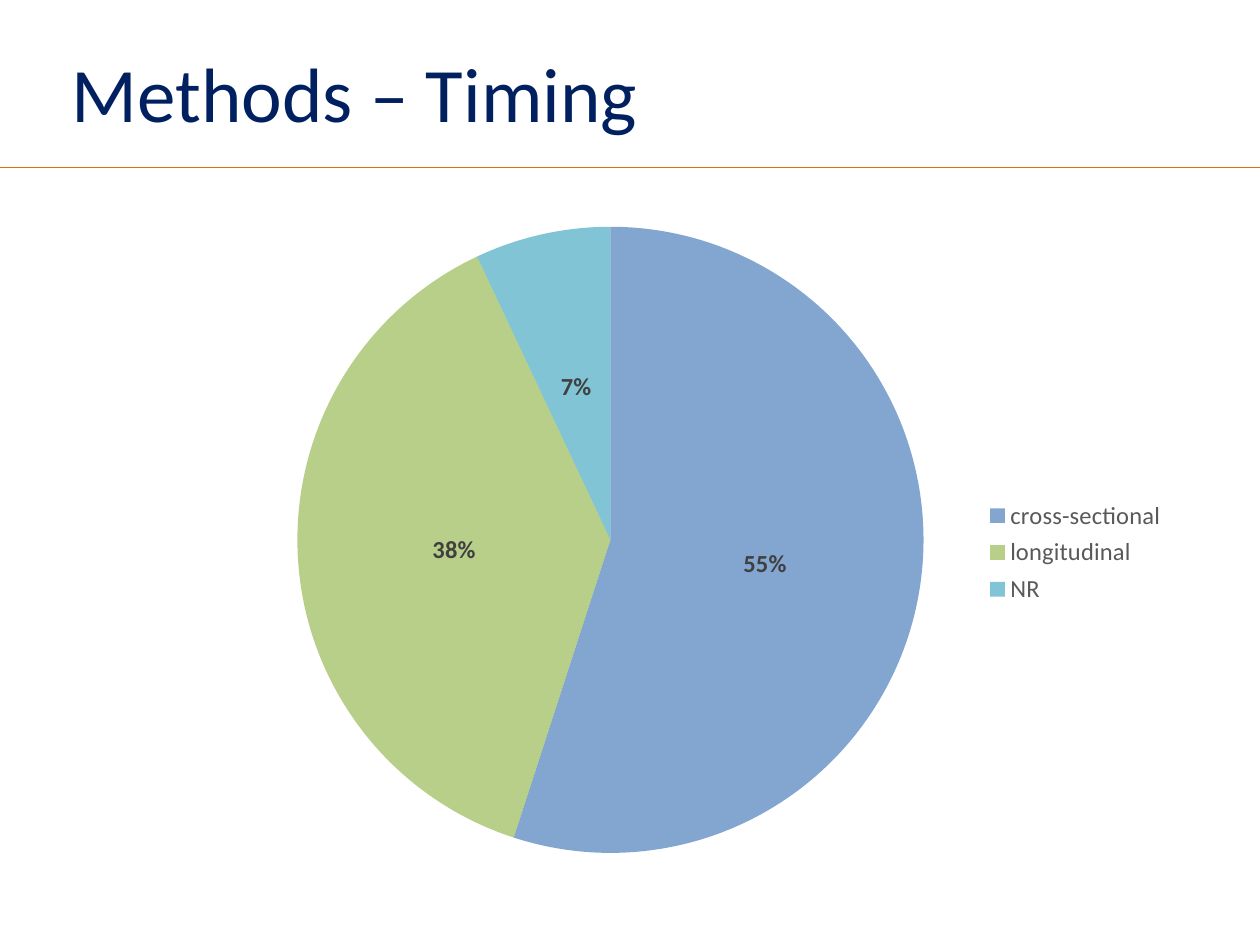
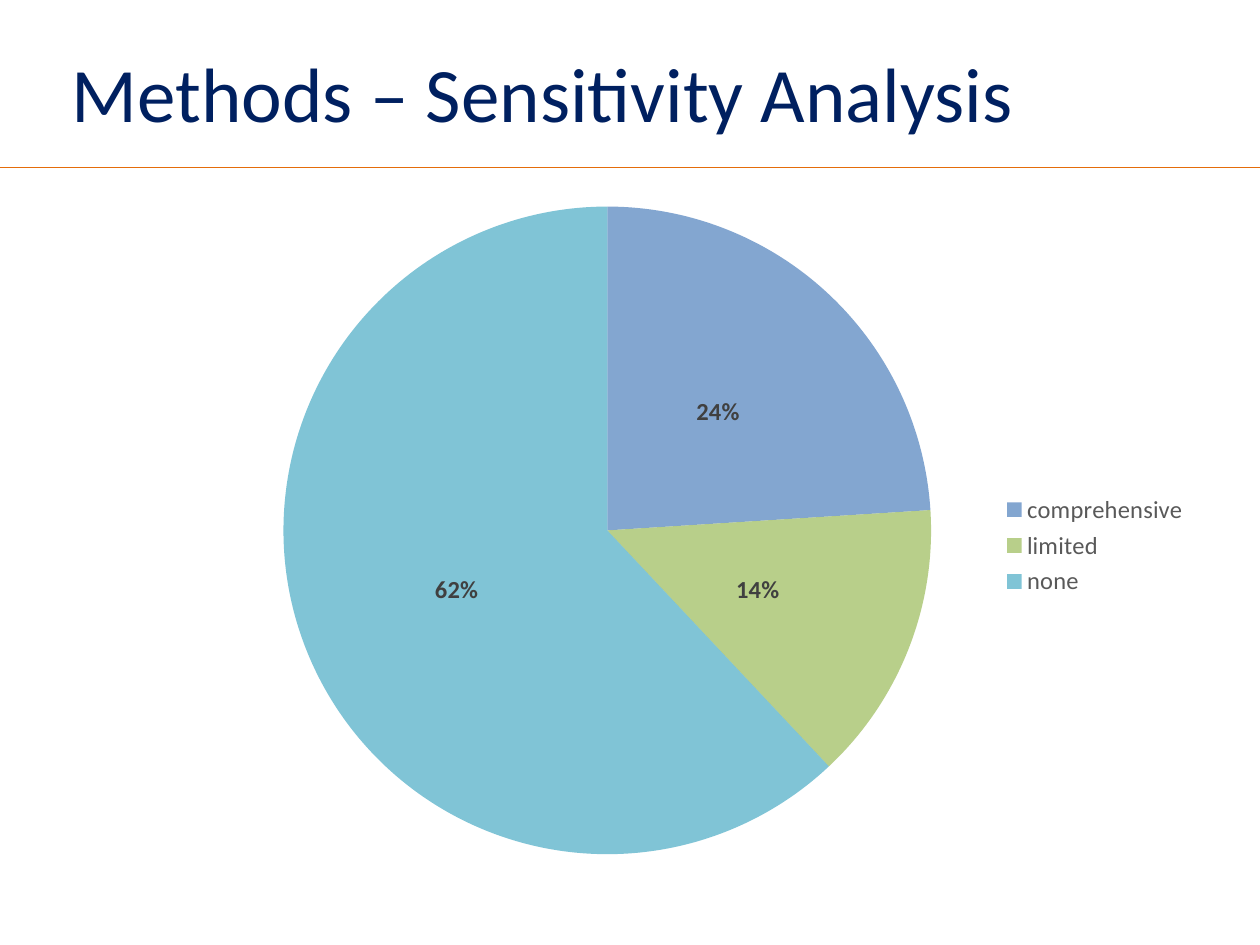
import collections

import lxml.etree
import pptx
import pptx.chart.data
import pptx.dml.color
import pptx.enum.chart
import pptx.enum.shapes
import pptx.enum.text
import pptx.oxml.ns
import pptx.util

Theme = collections.namedtuple(
    "Theme",
    "font title rule label legend text slices opacity title_size chart_size base_size",
)
theme = Theme(
    font="Calibri",
    title="002060",
    rule="E46C0A",
    label="404040",
    legend="595959",
    text="000000",
    slices=("4F81BD", "9BBB59", "4BACC6"),
    opacity=70,
    title_size=44,
    chart_size=14,
    base_size=10,
)

Pie = collections.namedtuple("Pie", "title shares frame plot_area legend_area")
pies = [
    Pie(
        "Methods – Timing",
        {"cross-sectional": 55, "longitudinal": 38, "NR": 7},
        frame=(1.92, 1.67, 7.42, 5.25),
        plot_area=(2.36, 1.8, 4.97, 4.97),
        legend_area=(7.76, 3.92, 1.55, 0.93),
    ),
    Pie(
        "Methods – Sensitivity Analysis",
        {"comprehensive": 24, "limited": 14, "none": 62},
        frame=(1.17, 1.5, 8.91, 5.42),
        plot_area=(2.25, 1.64, 5.14, 5.14),
        legend_area=(7.89, 3.88, 1.6, 0.9),
    ),
]


def style_font(font, size, color, bold=False):
    font.name = theme.font
    font.size = pptx.util.Pt(size)
    font.bold = bold
    font.color.rgb = pptx.dml.color.RGBColor.from_string(color)


def place_in_chart(element, index, area, frame, inner=False):
    qn = pptx.oxml.ns.qn
    for old_layout in element.findall(qn("c:layout")):
        element.remove(old_layout)
    layout = lxml.etree.Element(qn("c:layout"))
    manual = lxml.etree.SubElement(layout, qn("c:manualLayout"))
    settings = [("layoutTarget", "inner")] if inner else []
    settings += [("xMode", "edge"), ("yMode", "edge")]
    left, top, width, height = area
    frame_left, frame_top, frame_width, frame_height = frame
    settings += [
        ("x", (left - frame_left) / frame_width),
        ("y", (top - frame_top) / frame_height),
        ("w", width / frame_width),
        ("h", height / frame_height),
    ]
    for name, value in settings:
        lxml.etree.SubElement(manual, qn("c:" + name)).set("val", str(value))
    element.insert(index, layout)


presentation = pptx.Presentation()
presentation.slide_width = pptx.util.Inches(10)
presentation.slide_height = pptx.util.Inches(7.5)
rule_top = pptx.util.Inches(1.33)

title_layout = presentation.slide_layouts.get_by_name("Title Only")
layout_title = title_layout.placeholders[0]
layout_title.left, layout_title.top, layout_title.width, layout_title.height = (
    pptx.util.Inches(length) for length in (0.47, 0.29, 9.03, 1.04)
)

for page, pie in enumerate(pies):
    slide = presentation.slides.add_slide(title_layout)

    if page == 0:
        rule = slide.shapes.add_connector(
            pptx.enum.shapes.MSO_CONNECTOR.STRAIGHT,
            0, rule_top, presentation.slide_width, rule_top,
        )
        rule.line.color.rgb = pptx.dml.color.RGBColor.from_string(theme.rule)
        rule.line.width = pptx.util.Pt(1)
        lxml.etree.SubElement(rule._element.spPr, pptx.oxml.ns.qn("a:effectLst"))
        title_layout.shapes._spTree.append(rule._element)

    text_frame = slide.shapes.title.text_frame
    text_frame.word_wrap = True
    text_frame.auto_size = pptx.enum.text.MSO_AUTO_SIZE.NONE
    text_frame.vertical_anchor = pptx.enum.text.MSO_ANCHOR.TOP
    text_frame.margin_top = pptx.util.Inches(0.07)
    paragraph = text_frame.paragraphs[0]
    paragraph.alignment = pptx.enum.text.PP_ALIGN.LEFT
    run = paragraph.add_run()
    run.text = pie.title
    style_font(run.font, theme.title_size, theme.title)

    chart_data = pptx.chart.data.CategoryChartData()
    chart_data.categories = list(pie.shares)
    chart_data.add_series("Series 1", list(pie.shares.values()))
    chart = slide.shapes.add_chart(
        pptx.enum.chart.XL_CHART_TYPE.PIE,
        *(pptx.util.Inches(length) for length in pie.frame),
        chart_data,
    ).chart
    chart.has_title = False
    style_font(chart.font, theme.base_size, theme.text)

    plot = chart.plots[0]
    plot.vary_by_categories = True
    for index, color in enumerate(theme.slices):
        point = plot.series[0].points[index]
        point.format.line.fill.background()
        fill = point.format.fill
        fill.solid()
        fill.fore_color.rgb = pptx.dml.color.RGBColor.from_string(color)
        color_element = next(
            point.format._element.iter(pptx.oxml.ns.qn("a:srgbClr"))
        ) if hasattr(point.format, "_element") else fill._xPr.find(
            ".//" + pptx.oxml.ns.qn("a:srgbClr")
        )
        alpha = lxml.etree.SubElement(color_element, pptx.oxml.ns.qn("a:alpha"))
        alpha.set("val", str(theme.opacity * 1000))

    plot.has_data_labels = True
    labels = plot.data_labels
    labels.show_percentage = True
    labels.show_value = False
    labels.number_format = "0%"
    labels.number_format_is_linked = False
    labels.position = pptx.enum.chart.XL_LABEL_POSITION.CENTER
    style_font(labels.font, theme.chart_size, theme.label, bold=True)

    chart.has_legend = True
    chart.legend.position = pptx.enum.chart.XL_LEGEND_POSITION.RIGHT
    chart.legend.include_in_layout = False
    style_font(chart.legend.font, theme.chart_size, theme.legend)

    plot_area = chart._chartSpace.chart.plotArea
    place_in_chart(plot_area, 0, pie.plot_area, pie.frame, inner=True)
    place_in_chart(chart.legend._element, 1, pie.legend_area, pie.frame)

presentation.save("out.pptx")
